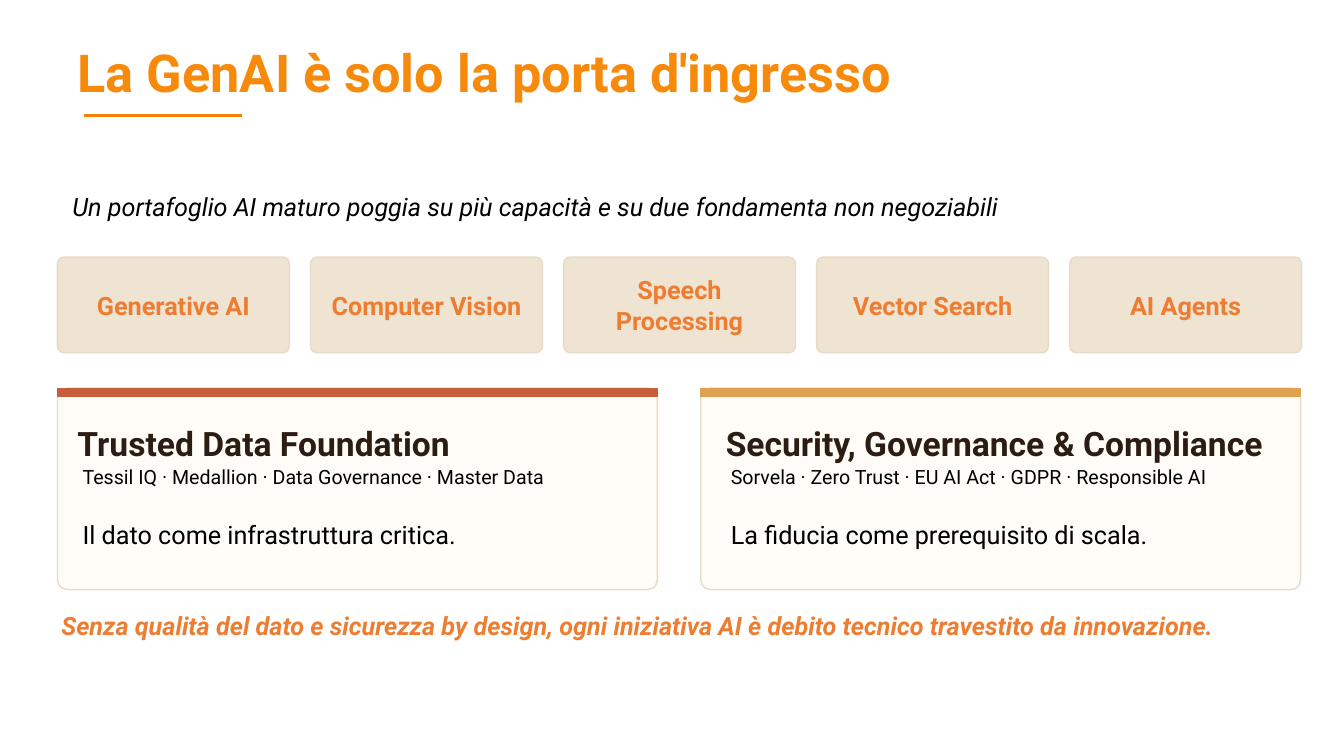
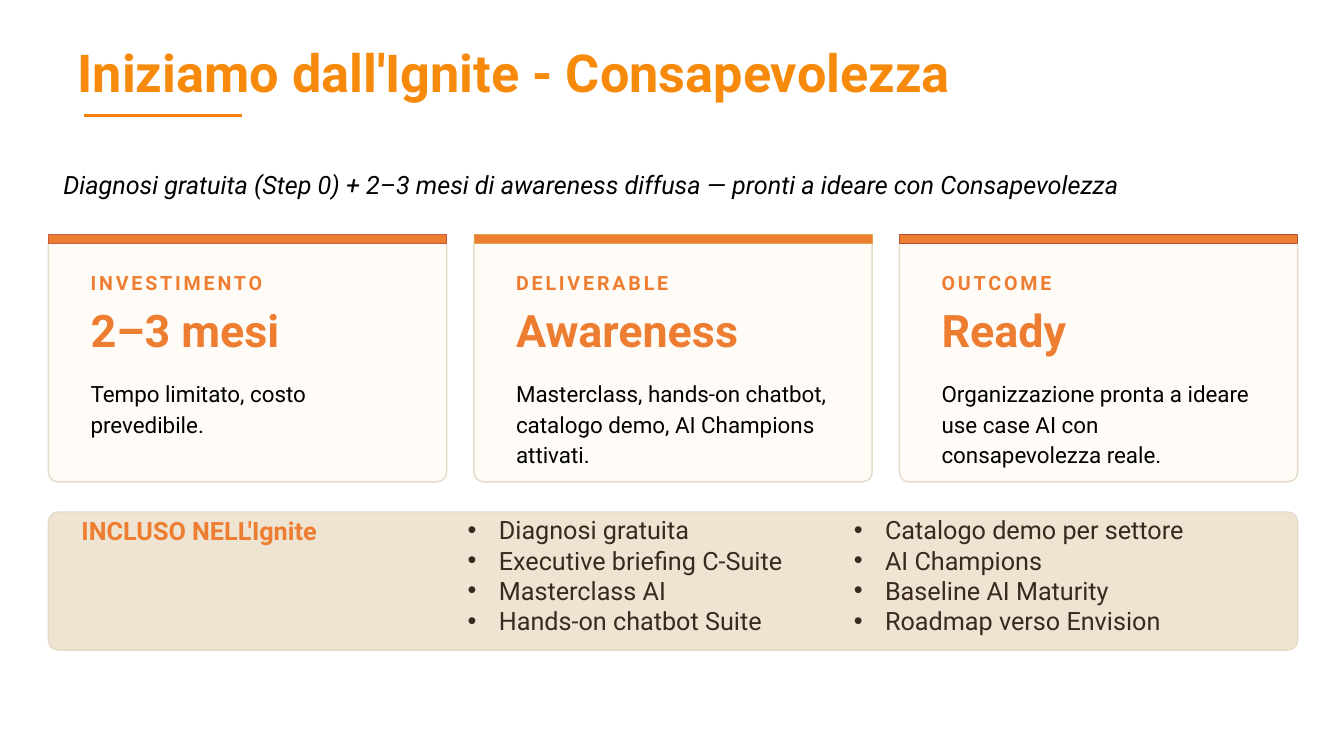
from lxml import etree
from pptx import Presentation
from pptx.dml.color import RGBColor
from pptx.enum.shapes import MSO_CONNECTOR, MSO_SHAPE
from pptx.enum.text import MSO_ANCHOR, MSO_AUTO_SIZE, PP_ALIGN
from pptx.oxml.ns import qn
from pptx.util import Emu, Pt

PX = 9144
FONT = "Roboto"
TITLE_ONLY = 5

RECT = MSO_SHAPE.RECTANGLE
ROUNDED = MSO_SHAPE.ROUNDED_RECTANGLE
STRAIGHT = MSO_CONNECTOR.STRAIGHT
TOP, MIDDLE = MSO_ANCHOR.TOP, MSO_ANCHOR.MIDDLE
LEFT, CENTER = PP_ALIGN.LEFT, PP_ALIGN.CENTER
NO_AUTOFIT = MSO_AUTO_SIZE.NONE

TITLE_ORANGE = RGBColor(0xF7, 0x8A, 0x0A)
RULE_ORANGE = RGBColor(0xF6, 0x81, 0x06)
ORANGE = RGBColor(0xED, 0x7D, 0x31)
BRICK = RGBColor(0xC7, 0x5D, 0x3A)
RUST = RGBColor(0xB5, 0x51, 0x2F)
GOLD = RGBColor(0xE0, 0xA2, 0x4E)
SAND = RGBColor(0xEF, 0xE3, 0xD2)
SAND_EDGE = RGBColor(0xE6, 0xDA, 0xC8)
CREAM = RGBColor(0xFF, 0xFC, 0xF7)
ESPRESSO = RGBColor(0x2B, 0x1D, 0x14)
BROWN = RGBColor(0x3A, 0x2A, 0x1E)
BLACK = RGBColor(0x00, 0x00, 0x00)

CAPABILITIES = ["Generative AI", "Computer Vision", "Speech Processing",
                "Vector Search", "AI Agents"]
FOUNDATIONS = [
    ("Trusted Data Foundation",
     "Tessil IQ · Medallion · Data Governance · Master Data",
     "Il dato come infrastruttura critica.", BRICK, 10),
    ("Security, Governance & Compliance",
     "Sorvela · Zero Trust · EU AI Act · GDPR · Responsible AI",
     "La fiducia come prerequisito di scala.", GOLD, 15),
]
BENEFITS = [
    ("INVESTIMENTO", "2–3 mesi", "Tempo limitato, costo prevedibile.", BRICK),
    ("DELIVERABLE", "Awareness",
     "Masterclass, hands-on chatbot, catalogo demo, AI Champions attivati.",
     GOLD),
    ("OUTCOME", "Ready",
     "Organizzazione pronta a ideare use case AI con consapevolezza reale.",
     RUST),
]
INCLUDED = [
    ["Diagnosi gratuita", "Executive briefing C-Suite", "Masterclass AI",
     "Hands-on chatbot Suite"],
    ["Catalogo demo per settore", "AI Champions", "Baseline AI Maturity",
     "Roadmap verso Envision"],
]


def px(*lengths):
    return [Emu(length * PX) for length in lengths]


def add_run(paragraph, text, size, color, bold=False, italic=False,
            tracking=0):
    run = paragraph.add_run()
    run.text = text
    font = run.font
    font.name, font.size = FONT, Pt(size)
    font.bold, font.italic = bold, italic
    font.color.rgb = color
    if tracking:
        run._r.get_or_add_rPr().set("spc", str(tracking * 100))


def add_frame(slide, at, anchor=MIDDLE):
    frame = slide.shapes.add_textbox(*px(*at)).text_frame
    frame.word_wrap = True
    frame.vertical_anchor = anchor
    return frame


def add_label(slide, at, text, size, color, align=LEFT, anchor=MIDDLE,
              spacing=None, **style):
    paragraph = add_frame(slide, at, anchor).paragraphs[0]
    paragraph.alignment = align
    paragraph.line_spacing = spacing
    add_run(paragraph, text, size, color, **style)


def add_bullets(slide, at, items):
    frame = add_frame(slide, at)
    for index, item in enumerate(items):
        paragraph = frame.add_paragraph() if index else frame.paragraphs[0]
        properties = paragraph._p.get_or_add_pPr()
        properties.set("marL", str(31 * PX))
        properties.set("indent", str(-31 * PX))
        etree.SubElement(properties, qn("a:buFont")).set("typeface", "Arial")
        etree.SubElement(properties, qn("a:buChar")).set("char", "•")
        add_run(paragraph, item, 18, BROWN)


def add_panel(slide, kind, at, fill, edge, edge_width=1, rounding=None):
    panel = slide.shapes.add_shape(kind, *px(*at))
    panel.shadow.inherit = False
    panel.fill.solid()
    panel.fill.fore_color.rgb = fill
    panel.line.color.rgb = edge
    panel.line.width = Pt(edge_width)
    if rounding is not None:
        panel.adjustments[0] = rounding


def add_banded_card(slide, at, band, band_edge, rounding):
    left, top, width, _ = at
    add_panel(slide, ROUNDED, at, CREAM, SAND_EDGE, rounding=rounding)
    add_panel(slide, RECT, (left, top, width, 8), band, band_edge, 0.5)


def add_titled_slide(deck, text):
    slide = deck.slides.add_slide(deck.slide_layouts[TITLE_ONLY])
    title = slide.shapes.title
    title.left, title.top, title.width, title.height = px(67, 36, 1163, 78)
    frame = title.text_frame
    frame.auto_size = NO_AUTOFIT
    frame.word_wrap = True
    frame.vertical_anchor = MIDDLE
    paragraph = frame.paragraphs[0]
    paragraph.alignment = LEFT
    paragraph.line_spacing = 0.9
    add_run(paragraph, text, 37.3, TITLE_ORANGE, bold=True)
    rule = slide.shapes.add_connector(STRAIGHT, *px(83, 115, 240, 115))
    rule.line.color.rgb = RULE_ORANGE
    rule.line.width = Pt(2.25)
    etree.SubElement(rule._element.spPr, qn("a:effectLst"))
    return slide


def add_capability(slide, left, name):
    add_panel(slide, ROUNDED, (left, 255, 230, 95), SAND, SAND_EDGE,
              rounding=0.07)
    add_label(slide, (left + 10, 255, 210, 95), name, 18, ORANGE,
              align=CENTER, bold=True)


def add_foundation(slide, left, heading, topics, claim, band, inset):
    add_banded_card(slide, (left, 385, 595, 200), band, band, 0.05)
    add_label(slide, (left + inset, 415, 571, 50), heading, 24, ESPRESSO,
              bold=True)
    frame = add_frame(slide, (left + inset + 5, 459, 531, 85))
    topics_line, claim_line = frame.paragraphs[0], frame.add_paragraph()
    topics_line.line_spacing = claim_line.line_spacing = 1.15
    claim_line.space_before = Pt(19)
    add_run(topics_line, topics, 14, BLACK)
    add_run(claim_line, claim, 18, BLACK)


def add_benefit(slide, left, category, headline, detail, band_edge):
    add_banded_card(slide, (left, 233, 395, 245), ORANGE, band_edge, 0.04)
    inner = left + 32
    add_label(slide, (inner, 263, 331, 35), category, 14, ORANGE, bold=True,
              tracking=2)
    add_label(slide, (inner, 297, 331, 60), headline, 32, ORANGE, bold=True)
    add_label(slide, (inner, 368, 331, 100), detail, 16, BLACK, anchor=TOP,
              spacing=1.15)


def build_foundations_slide(deck):
    slide = add_titled_slide(deck, "La GenAI è solo la porta d'ingresso")
    add_label(slide, (62, 182, 1230, 45),
              "Un portafoglio AI maturo poggia su più capacità e su due "
              "fondamenta non negoziabili", 18, BLACK, italic=True)
    for index, name in enumerate(CAPABILITIES):
        add_capability(slide, 57 + index * 251, name)
    for index, foundation in enumerate(FOUNDATIONS):
        add_foundation(slide, 57 + index * 638, *foundation)
    add_label(slide, (51, 600, 1230, 40),
              "Senza qualità del dato e sicurezza by design, ogni iniziativa "
              "AI è debito tecnico travestito da innovazione.", 18, ORANGE,
              bold=True, italic=True)


def build_awareness_slide(deck):
    slide = add_titled_slide(deck, "Iniziamo dall'Ignite - Consapevolezza")
    add_label(slide, (53, 160, 1230, 45),
              "Diagnosi gratuita (Step 0) + 2–3 mesi di awareness diffusa — "
              "pronti a ideare con Consapevolezza", 18, BLACK, italic=True)
    for index, benefit in enumerate(BENEFITS):
        add_benefit(slide, 48 + index * 422, *benefit)
    add_panel(slide, ROUNDED, (48, 508, 1239, 137), SAND, SAND_EDGE,
              rounding=0.07)
    add_label(slide, (71, 510, 383, 32), "INCLUSO NELL'Ignite", 18, ORANGE,
              bold=True)
    for column, items in enumerate(INCLUDED, start=1):
        add_bullets(slide, (71 + column * 383, 523, 383, 95), items)


def main():
    deck = Presentation()
    deck.slide_width, deck.slide_height = px(1333, 750)
    build_foundations_slide(deck)
    build_awareness_slide(deck)
    deck.save("out.pptx")


if __name__ == "__main__":
    main()
